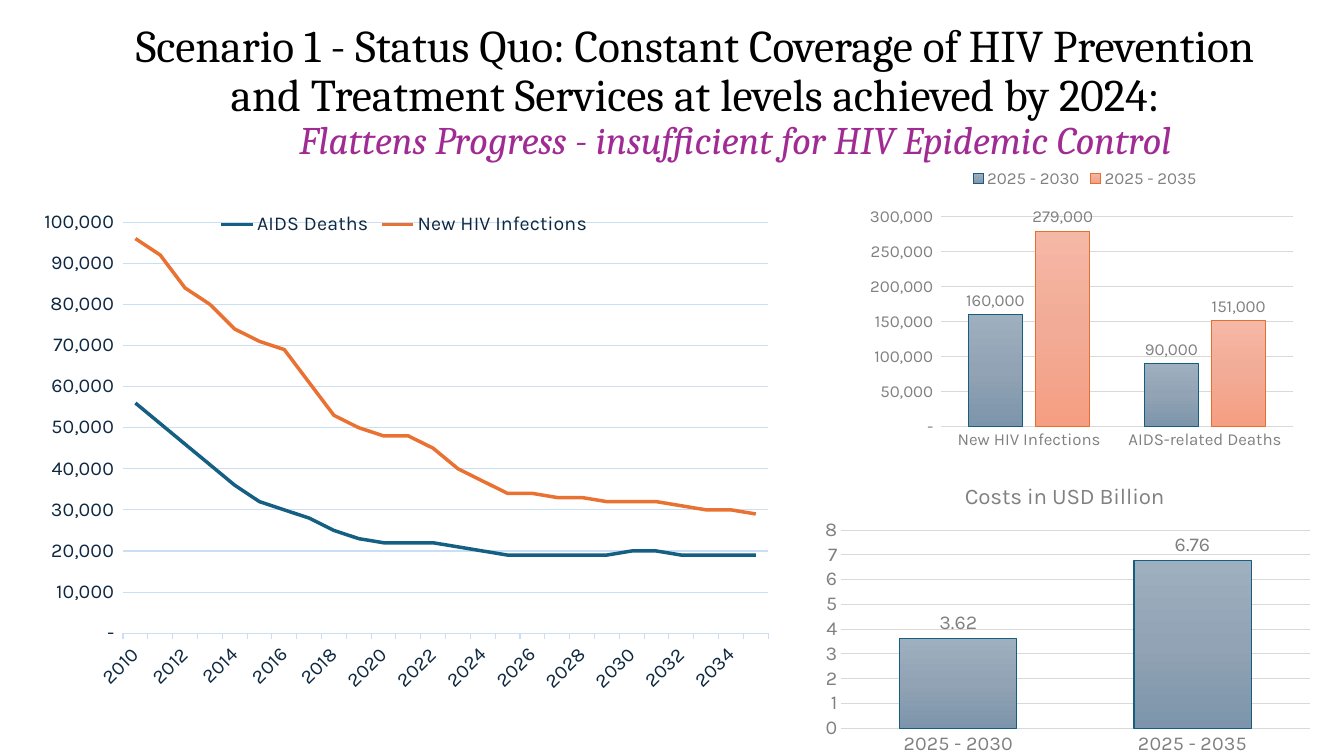
from copy import deepcopy

from lxml.etree import SubElement
from pptx import Presentation
from pptx.chart.data import CategoryChartData
from pptx.dml.color import RGBColor
from pptx.enum.chart import XL_CHART_TYPE, XL_LABEL_POSITION, XL_LEGEND_POSITION, XL_TICK_MARK
from pptx.enum.text import MSO_ANCHOR, MSO_AUTO_SIZE, PP_ALIGN
from pptx.oxml.ns import qn
from pptx.util import Inches, Pt

BLACK = RGBColor(0x00, 0x00, 0x00)
PURPLE = RGBColor(0xA0, 0x2B, 0x93)
NAVY = RGBColor(0x0E, 0x28, 0x41)
PALE_BLUE = RGBColor(0xCA, 0xDF, 0xF4)
GRAY = RGBColor(0x80, 0x80, 0x80)
LIGHT_GRAY = RGBColor(0xD9, 0xD9, 0xD9)
TEAL = RGBColor(0x15, 0x60, 0x82)
ORANGE = RGBColor(0xE9, 0x71, 0x32)
TEAL_EDGE = RGBColor(0x15, 0x5E, 0x7F)
ORANGE_EDGE = RGBColor(0xE4, 0x6F, 0x31)
SLATE = [RGBColor(0x9E, 0xAF, 0xBF), RGBColor(0x91, 0xA3, 0xB4), RGBColor(0x7C, 0x95, 0xAB)]
SALMON = [RGBColor(0xF5, 0xB8, 0xA5), RGBColor(0xF2, 0xAB, 0x96), RGBColor(0xF5, 0x9E, 0x82)]
THOUSANDS = '_(* #,##0_);_(* \\(#,##0\\);_(* "-"_);_(@_)'


def set_font(font, size, color):
    font.name = "Karla"
    font.size = Pt(size)
    font.bold = False
    font.color.rgb = color


def set_layout(parent, inner, **box):
    layout = parent.find(qn("c:layout"))
    if layout is None:
        layout = parent.makeelement(qn("c:layout"))
        parent.insert(0, layout)
    manual = SubElement(layout, qn("c:manualLayout"))
    if inner:
        SubElement(manual, qn("c:layoutTarget")).set("val", "inner")
    for side in "xy":
        SubElement(manual, qn(f"c:{side}Mode")).set("val", "edge")
    for name, value in box.items():
        SubElement(manual, qn(f"c:{name}")).set("val", str(value))


prs = Presentation()
prs.slide_width, prs.slide_height = Inches(13.33), Inches(7.5)
s = prs.slides.add_slide(prs.slide_layouts[5])

title = s.shapes.title
title.left, title.top = Inches(0.92), Inches(0.37)
title.width, title.height = Inches(11.95), Inches(1.11)
tf = title.text_frame
tf.text = ("Scenario 1 - Status Quo: Constant Coverage of HIV Prevention and Treatment "
           "Services at levels achieved by 2024:\n"
           "Flattens Progress - insufficient for HIV Epidemic Control")
tf.word_wrap = True
tf.auto_size = MSO_AUTO_SIZE.NONE
tf.vertical_anchor = MSO_ANCHOR.MIDDLE
for p, size, color, italic in zip(tf.paragraphs, (32.4, 27.9), (BLACK, PURPLE), (False, True)):
    p.alignment = PP_ALIGN.CENTER
    p.line_spacing = 0.9
    font = p.runs[0].font
    font.name, font.size, font.italic = "Cambria", Pt(size), italic
    font.color.rgb = color
tf.paragraphs[1]._p.get_or_add_pPr().set("marL", str(Inches(0.8)))

deaths = [56, 51, 46, 41, 36, 32, 30, 28, 25, 23, 22, 22, 22,
          21, 20, 19, 19, 19, 19, 19, 20, 20, 19, 19, 19, 19]
infections = [96, 92, 84, 80, 74, 71, 69, 61, 53, 50, 48, 48, 45,
              40, 37, 34, 34, 33, 33, 32, 32, 32, 31, 30, 30, 29]

charts = [
    (XL_CHART_TYPE.LINE, (0.25, 2, 7.52, 4.98), (0.129, 0.041, 0.851, 0.819),
     14, NAVY, PALE_BLUE, THOUSANDS, [str(year) for year in range(2010, 2036)],
     [("AIDS Deaths", [v * 1000 for v in deaths], None, TEAL),
      ("New HIV Infections", [v * 1000 for v in infections], None, ORANGE)]),
    (XL_CHART_TYPE.COLUMN_CLUSTERED, (8.54, 1.56, 4.44, 3), (0.179, 0.196, 0.786, 0.694),
     12, GRAY, LIGHT_GRAY, THOUSANDS, ["New HIV Infections", "AIDS-related Deaths"],
     [("2025 - 2030", [160000, 90000], SLATE, TEAL_EDGE),
      ("2025 - 2035", [279000, 151000], SALMON, ORANGE_EDGE)]),
    (XL_CHART_TYPE.COLUMN_CLUSTERED, (8.08, 4.56, 5, 3), (0.053, 0.233, 0.929, 0.656),
     14, GRAY, LIGHT_GRAY, "General", ["2025 - 2030", "2025 - 2035"],
     [("Series 1", [3.62, 6.76], SLATE, TEAL_EDGE)]),
]

for kind, box, plot_box, size, color, grid, fmt, cats, series in charts:
    data = CategoryChartData(number_format=fmt)
    data.categories = cats
    for name, values, _, _ in series:
        data.add_series(name, values)
    chart = s.shapes.add_chart(kind, *map(Inches, box), data).chart
    set_font(chart.font, size, color)
    chart.has_title = False
    chart.has_legend = len(series) > 1
    if chart.has_legend:
        chart.legend.position = XL_LEGEND_POSITION.TOP
        chart.legend.include_in_layout = True
        set_font(chart.legend.font, size, color)
    set_layout(chart._chartSpace.find(".//" + qn("c:plotArea")), True,
               **dict(zip("xywh", plot_box)))

    cat, val = chart.category_axis, chart.value_axis
    for axis in (cat, val):
        axis.major_tick_mark = axis.minor_tick_mark = XL_TICK_MARK.NONE
        set_font(axis.tick_labels.font, size, color)
    cat.format.line.color.rgb = grid
    cat.format.line.width = Pt(0.75)
    val.format.line.fill.background()
    val.minimum_scale = 0
    val.has_major_gridlines = True
    val.major_gridlines.format.line.color.rgb = grid
    val.major_gridlines.format.line.width = Pt(0.75)
    val.tick_labels.number_format = fmt
    val.tick_labels.number_format_is_linked = False

    plot = chart.plots[0]
    plot.vary_by_categories = False
    if kind == XL_CHART_TYPE.LINE:
        val.maximum_scale = 100000
        cat.major_tick_mark = XL_TICK_MARK.OUTSIDE
        cat._element.find(".//" + qn("a:bodyPr")).set("rot", "-2700000")
        skip = cat._element.makeelement(qn("c:tickLblSkip"), {"val": "2"})
        cat._element.find(qn("c:noMultiLvlLbl")).addprevious(skip)
    else:
        plot.gap_width, plot.overlap = 100, -24
        plot.has_data_labels = True
        labels = plot.data_labels
        labels.show_value = True
        labels.position = XL_LABEL_POSITION.OUTSIDE_END
        labels.number_format = fmt
        labels.number_format_is_linked = False
        set_font(labels.font, size, color)

    for ser, (_, _, stops, edge) in zip(plot.series, series):
        ser.format.line.color.rgb = edge
        ser.format.line.width = Pt(0.75 if stops else 2.5)
        if not stops:
            ser.smooth = False
            continue
        fill = ser.format.fill
        fill.gradient()
        fill.gradient_angle = 270
        gradient = ser._element.find(".//" + qn("a:gsLst"))
        gradient.insert(1, deepcopy(gradient[0]))
        for stop, shade, position in zip(fill.gradient_stops, stops, (0, 0.5, 1)):
            stop.color.rgb = shade
            stop.position = position

cost_title = chart.chart_title
cost_title.text_frame.text = "Costs in USD Billion"
set_font(cost_title.text_frame.paragraphs[0].runs[0].font, 16, GRAY)
cost_title.include_in_layout = False
set_layout(cost_title._element, False, x=0.29, y=0.06)

prs.save("out.pptx")
